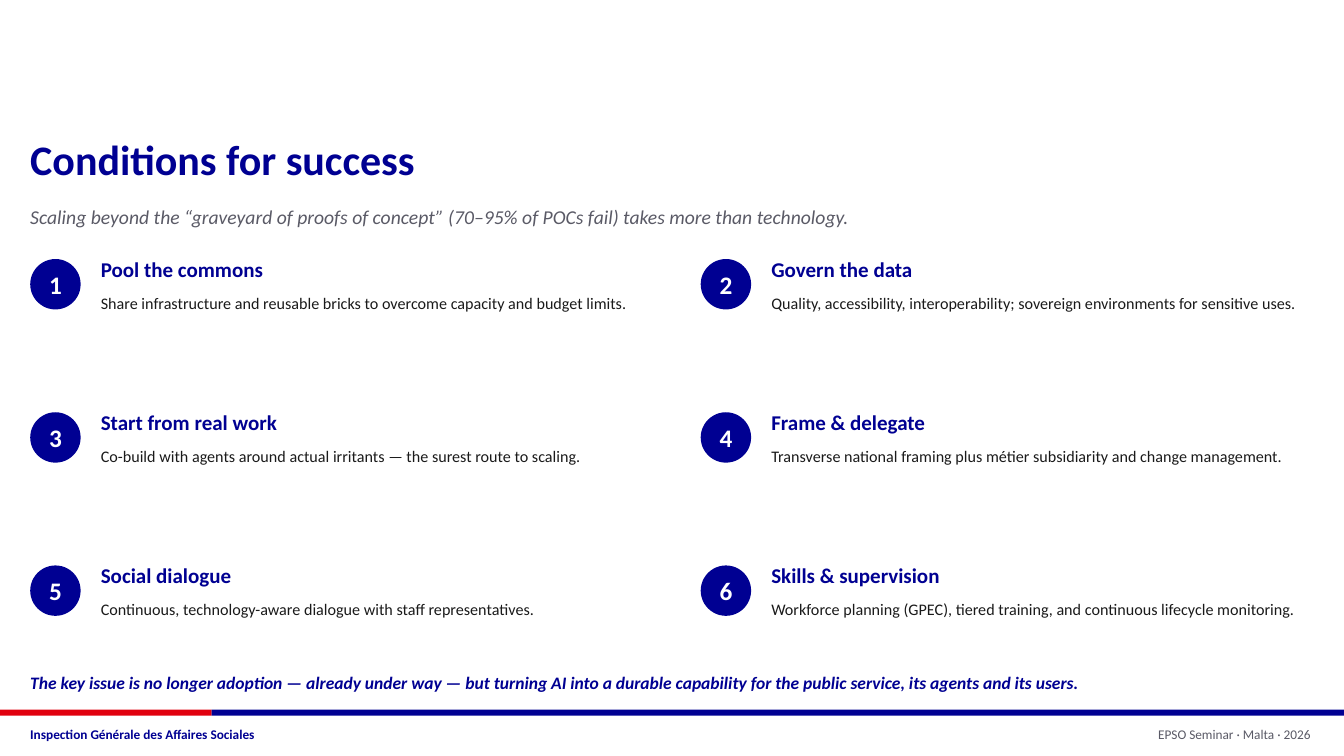
"""Build the "Conditions for success" slide with its six numbered conditions."""
from dataclasses import dataclass

from pptx import Presentation
from pptx.dml.color import RGBColor
from pptx.enum.shapes import MSO_SHAPE
from pptx.enum.text import MSO_ANCHOR, MSO_AUTO_SIZE, PP_ALIGN
from pptx.shapes.autoshape import Shape
from pptx.slide import Slide
from pptx.util import Inches, Pt

RECTANGLE, OVAL = MSO_SHAPE.RECTANGLE, MSO_SHAPE.OVAL
TOP, MIDDLE = MSO_ANCHOR.TOP, MSO_ANCHOR.MIDDLE
LEFT, CENTER, RIGHT = PP_ALIGN.LEFT, PP_ALIGN.CENTER, PP_ALIGN.RIGHT
NO_AUTOFIT = MSO_AUTO_SIZE.NONE

NAVY = RGBColor(0x00, 0x00, 0x92)
RED = RGBColor(0xE1, 0x00, 0x0F)
GREY = RGBColor(0x5A, 0x5A, 0x66)
INK = RGBColor(0x1A, 0x1A, 0x1A)
WHITE = RGBColor(0xFF, 0xFF, 0xFF)
FONT = "Calibri"

TITLE_ONLY = 5
PAGE_WIDTH, PAGE_HEIGHT = 13.33, 7.5
MARGIN = 0.3
GRID_TOP = 2.57
COLUMNS = 2
COLUMN_STEP, ROW_STEP = 6.65, 1.52
CIRCLE_SIZE = 0.5
TEXT_OFFSET, TEXT_WIDTH = 0.7, 5.25
BAR_TOP, BAR_HEIGHT, RED_WIDTH = 7.04, 0.06, 2.1
FOOTER_TOP, FOOTER_HEIGHT = 7.13, 0.3


@dataclass(frozen=True)
class Area:
    """Hold a position and a size in inches."""

    left: float
    top: float
    width: float
    height: float

    def lengths(self) -> tuple[Inches, Inches, Inches, Inches]:
        """Return the four lengths for a shape call."""
        return Inches(self.left), Inches(self.top), Inches(self.width), Inches(self.height)


@dataclass(frozen=True)
class Condition:
    """Describe one condition for success."""

    heading: str
    detail: str


CONDITIONS = (
    Condition("Pool the commons",
              "Share infrastructure and reusable bricks to overcome capacity and budget limits."),
    Condition("Govern the data",
              "Quality, accessibility, interoperability; sovereign environments for sensitive uses."),
    Condition("Start from real work",
              "Co-build with agents around actual irritants — the surest route to scaling."),
    Condition("Frame & delegate",
              "Transverse national framing plus métier subsidiarity and change management."),
    Condition("Social dialogue",
              "Continuous, technology-aware dialogue with staff representatives."),
    Condition("Skills & supervision",
              "Workforce planning (GPEC), tiered training, and continuous lifecycle monitoring."),
)


def write(box: Shape, text: str, *, size: float, color: RGBColor, bold: bool = False,
          italic: bool = False, align: PP_ALIGN = LEFT, anchor: MSO_ANCHOR = MIDDLE) -> None:
    """Put one formatted paragraph into a shape without inner margins."""
    frame = box.text_frame
    frame.auto_size = NO_AUTOFIT
    frame.word_wrap = True
    frame.vertical_anchor = anchor
    frame.margin_left = frame.margin_top = frame.margin_right = frame.margin_bottom = 0
    para = frame.paragraphs[0]
    para.alignment = align
    span = para.add_run()
    span.text = text
    span.font.name = FONT
    span.font.size = Pt(size)
    span.font.bold = bold
    span.font.italic = italic
    span.font.color.rgb = color


def add_text(page: Slide, area: Area) -> Shape:
    """Add an empty text box."""
    return page.shapes.add_textbox(*area.lengths())


def add_solid(page: Slide, kind: MSO_SHAPE, area: Area, color: RGBColor) -> Shape:
    """Add a filled shape without outline or shadow."""
    shape = page.shapes.add_shape(kind, *area.lengths())
    shape.shadow.inherit = False
    shape.fill.solid()
    shape.fill.fore_color.rgb = color
    shape.line.fill.background()
    return shape


def add_footer(page: Slide) -> None:
    """Draw the two-colour bar and the footer texts."""
    add_solid(page, RECTANGLE, Area(0, BAR_TOP, RED_WIDTH, BAR_HEIGHT), RED)
    add_solid(page, RECTANGLE,
              Area(RED_WIDTH, BAR_TOP, PAGE_WIDTH - RED_WIDTH, BAR_HEIGHT), NAVY)
    write(add_text(page, Area(MARGIN, FOOTER_TOP, 8, FOOTER_HEIGHT)),
          "Inspection Générale des Affaires Sociales", size=9.5, color=NAVY, bold=True)
    write(add_text(page, Area(8.5, FOOTER_TOP, 4.5, FOOTER_HEIGHT)),
          "EPSO Seminar · Malta · 2026", size=9.5, color=GREY, align=RIGHT)


def add_heading(page: Slide) -> None:
    """Fill the title and add the subtitle."""
    title = page.shapes.title
    title.left, title.top, title.width, title.height = Area(MARGIN, 1.15, 12.6, 0.85).lengths()
    write(title, "Conditions for success", size=30, color=NAVY, bold=True)
    write(add_text(page, Area(MARGIN, 1.95, 12.6, 0.4)),
          "Scaling beyond the “graveyard of proofs of concept” (70–95% of POCs fail) "
          "takes more than technology.", size=14, color=GREY, italic=True)


def add_condition(page: Slide, index: int, condition: Condition) -> None:
    """Draw a numbered circle with its heading and detail."""
    row, column = divmod(index, COLUMNS)
    left = MARGIN + column * COLUMN_STEP
    top = GRID_TOP + row * ROW_STEP
    circle = add_solid(page, OVAL, Area(left, top, CIRCLE_SIZE, CIRCLE_SIZE), NAVY)
    write(circle, str(index + 1), size=18, color=WHITE, bold=True, align=CENTER)
    text_left = left + TEXT_OFFSET
    write(add_text(page, Area(text_left, top - 0.1, TEXT_WIDTH, 0.4)),
          condition.heading, size=15, color=NAVY, bold=True)
    write(add_text(page, Area(text_left, top + 0.34, TEXT_WIDTH, 0.7)),
          condition.detail, size=11.5, color=INK, anchor=TOP)


def main() -> None:
    """Build and save the deck."""
    deck = Presentation()
    deck.slide_width, deck.slide_height = Inches(PAGE_WIDTH), Inches(PAGE_HEIGHT)
    page = deck.slides.add_slide(deck.slide_layouts[TITLE_ONLY])
    add_footer(page)
    add_heading(page)
    for index, condition in enumerate(CONDITIONS):
        add_condition(page, index, condition)
    write(add_text(page, Area(MARGIN, 6.55, 12.7, 0.45)),
          "The key issue is no longer adoption — already under way — but turning AI into a "
          "durable capability for the public service, its agents and its users.",
          size=12.5, color=NAVY, bold=True, italic=True)
    deck.save("out.pptx")


if __name__ == "__main__":
    main()
